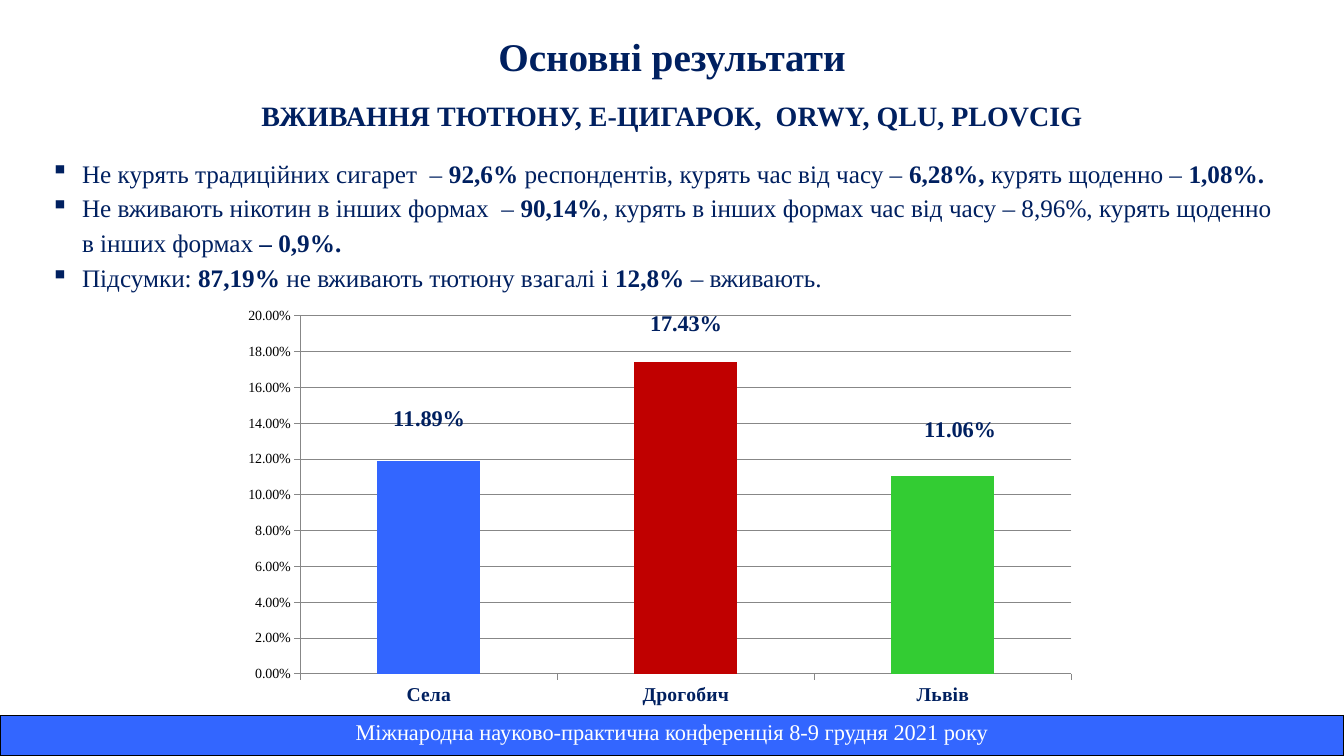
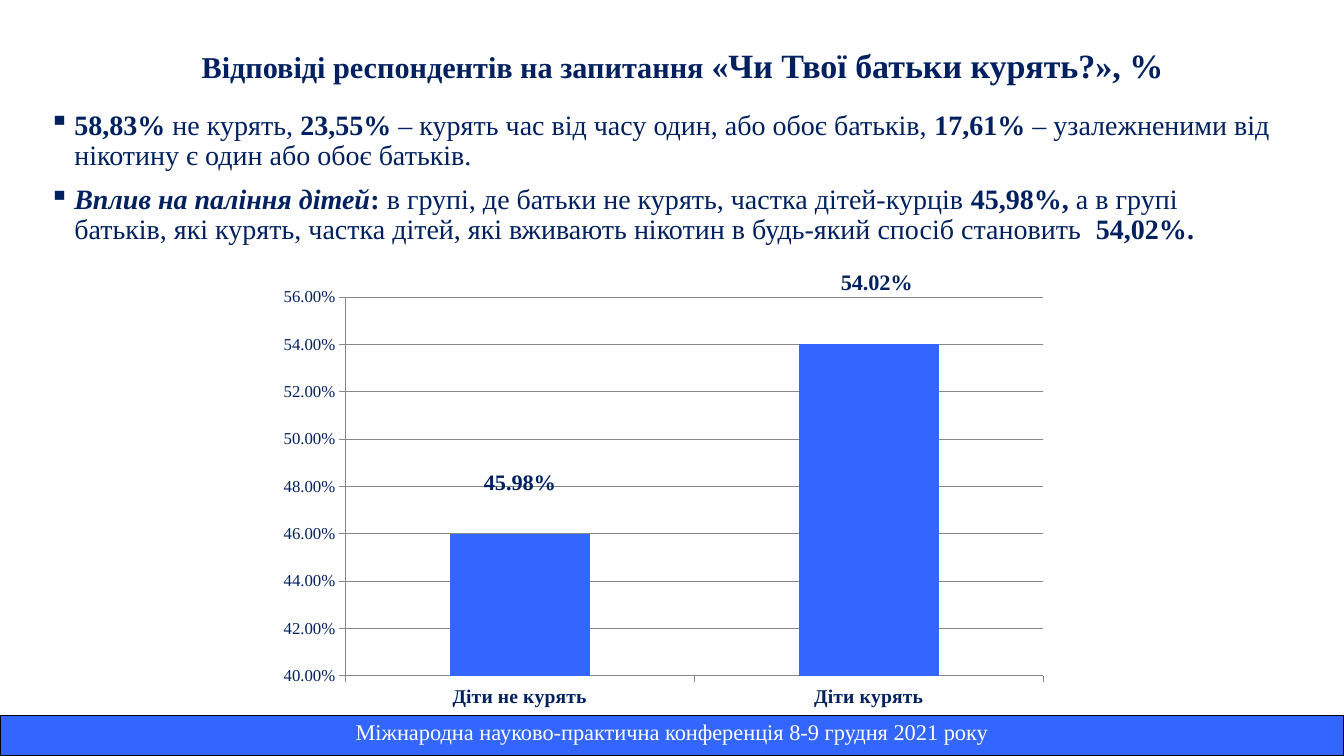
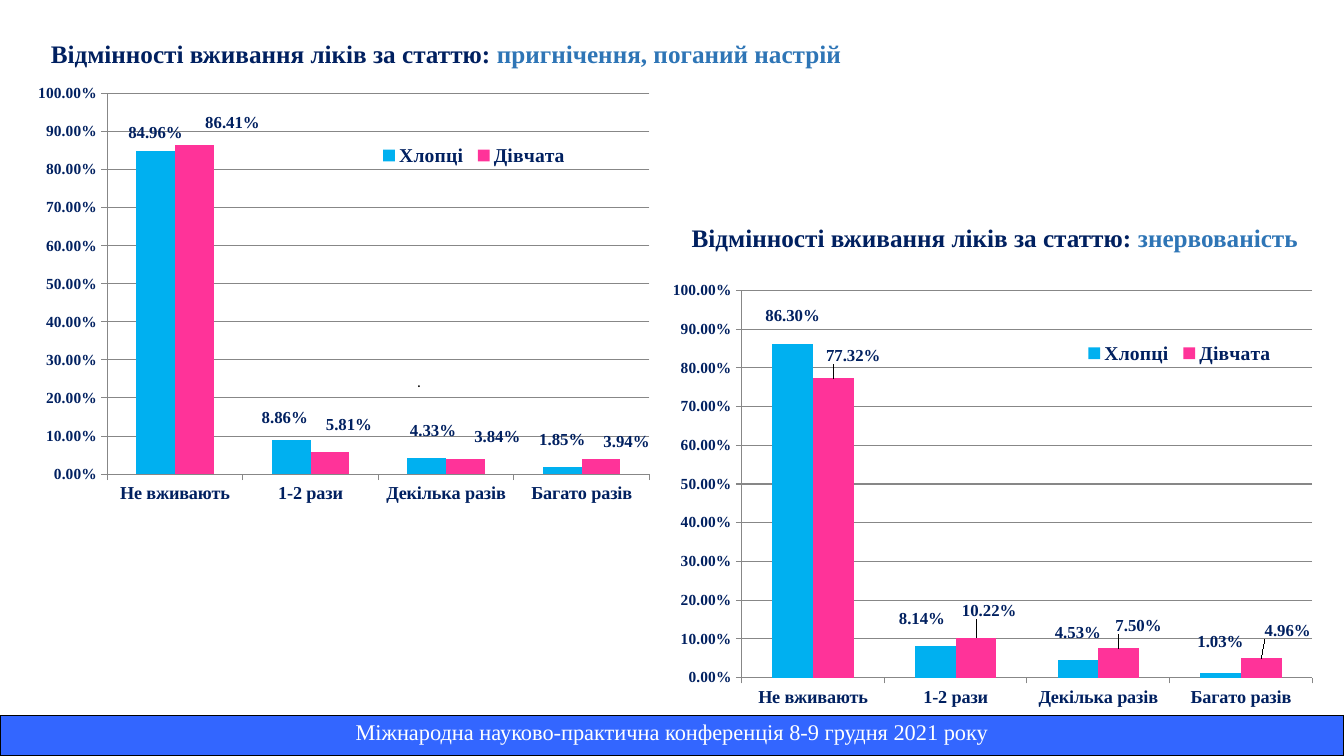
from dataclasses import dataclass
from typing import Any

from lxml import etree
from pptx import Presentation
from pptx import util as u
from pptx.chart import data as cd
from pptx.dml.color import RGBColor
from pptx.enum import chart as ce
from pptx.enum import text as te
from pptx.oxml import ns

Pt = u.Pt
FONT = "Times New Roman"
NAVY = RGBColor(0x00, 0x20, 0x60)
BLUE = RGBColor(0x33, 0x66, 0xFF)
RED = RGBColor(0xC0, 0x00, 0x00)
GREEN = RGBColor(0x33, 0xCC, 0x33)
SKY = RGBColor(0x00, 0xB0, 0xF0)
PINK = RGBColor(0xFF, 0x33, 0x99)
STEEL = RGBColor(0x2E, 0x75, 0xB6)
GRID = RGBColor(0x87, 0x87, 0x87)
BLACK = RGBColor(0, 0, 0)
WHITE = RGBColor(0xFF, 0xFF, 0xFF)
WIDTH, HEIGHT, FOOTER_H = 960, 540, 28.8
FOOTER = "Міжнародна науково-практична конференція 8-9 грудня 2021 року"


@dataclass
class Box:
    x: float
    y: float
    w: float
    h: float


@dataclass
class Run:
    text: str
    bold: bool = False
    italic: bool = False
    size: float | None = None
    color: RGBColor = NAVY
    font: str = FONT


@dataclass
class Para:
    runs: list[Run]
    size: float
    align: Any = te.PP_ALIGN.LEFT
    spacing: float = 1.0
    before: float = 0
    indent: float = 0


@dataclass
class Series:
    name: str
    values: list[float]
    colors: list[RGBColor]
    offsets: list[tuple[float, float]]
    leaders: bool = False


@dataclass
class Column:
    box: Box
    plot: Box
    cats: list[str]
    series: list[Series]
    low: float
    high: float
    step: float
    cat_size: float
    val_size: float
    label_size: float
    val_color: RGBColor = NAVY
    val_bold: bool = False
    legend: Box | None = None


def marked(line: str) -> list[Run]:
    return [Run(t, bold=i % 2 == 1) for i, t in enumerate(line.split("*")) if t]


def style(font: Any, size: float, color: RGBColor = NAVY, bold: bool = False, name: str = FONT) -> None:
    font.name, font.size, font.bold = name, Pt(size), bold
    font.color.rgb = color


def frame(box: Box) -> tuple[Any, ...]:
    return Pt(box.x), Pt(box.y), Pt(box.w), Pt(box.h)


def add_text(s: Any, box: Box, paras: list[Para], middle: bool = True) -> None:
    tf = s.shapes.add_textbox(*frame(box)).text_frame
    tf.word_wrap = True
    tf.vertical_anchor = te.MSO_ANCHOR.MIDDLE if middle else te.MSO_ANCHOR.TOP
    for i, para in enumerate(paras):
        p = tf.add_paragraph() if i else tf.paragraphs[0]
        p.alignment, p.line_spacing = para.align, para.spacing
        p.space_before = Pt(para.before)
        if para.indent:
            ppr = p._p.get_or_add_pPr()
            ppr.set("marL", str(Pt(para.indent)))
            ppr.set("indent", str(-Pt(para.indent)))
            etree.SubElement(ppr, ns.qn("a:buChar")).set("char", "▪")
        for run in para.runs:
            r = p.add_run()
            r.text = run.text
            style(r.font, run.size or para.size, run.color, run.bold, run.font)
            r.font.italic = run.italic


def add_title(s: Any, box: Box, runs: list[Run], size: float, align: Any = te.PP_ALIGN.CENTER) -> None:
    add_text(s, box, [Para(runs, size, align, 0.9)])


def add_footer(s: Any) -> None:
    box = Box(0, HEIGHT - FOOTER_H, WIDTH, FOOTER_H)
    table = s.shapes.add_table(1, 1, *frame(box)).table
    table.first_row = table.horz_banding = False
    cell = table.cell(0, 0)
    cell.text_frame.text = FOOTER
    p = cell.text_frame.paragraphs[0]
    p.alignment = te.PP_ALIGN.CENTER
    style(p.runs[0].font, 16, WHITE)
    tcpr = cell._tc.get_or_add_tcPr()
    for side in ("lnL", "lnR", "lnT", "lnB"):
        ln = etree.SubElement(tcpr, ns.qn(f"a:{side}"), w=str(Pt(1)))
        fill = etree.SubElement(ln, ns.qn("a:solidFill"))
        etree.SubElement(fill, ns.qn("a:srgbClr"), val=str(BLACK))
    cell.fill.solid()
    cell.fill.fore_color.rgb = BLUE


def set_layout(parent: Any, index: int, values: dict[str, Any]) -> None:
    for old in parent.findall(ns.qn("c:layout")):
        parent.remove(old)
    layout = etree.Element(ns.qn("c:layout"))
    manual = etree.SubElement(layout, ns.qn("c:manualLayout"))
    for tag, val in values.items():
        etree.SubElement(manual, ns.qn(f"c:{tag}")).set("val", str(val))
    parent.insert(index, layout)


def area(box: Box) -> dict[str, Any]:
    return {"xMode": "edge", "yMode": "edge", "x": box.x, "y": box.y, "w": box.w, "h": box.h}


def color_series(ser: Any, row: Series, label_size: float) -> None:
    ser.invert_if_negative = False
    ser.format.fill.solid()
    ser.format.fill.fore_color.rgb = row.colors[0]
    labels = ser.data_labels
    labels.show_value = True
    labels.number_format, labels.number_format_is_linked = "0.00%", False
    style(labels.font, label_size, bold=True)
    for i in range(len(row.offsets)):
        point = ser.points[i]
        if len(row.colors) > 1:
            point.format.fill.solid()
            point.format.fill.fore_color.rgb = row.colors[i]
        style(point.data_label.font, label_size, bold=True)
        point.data_label.position = ce.XL_LABEL_POSITION.OUTSIDE_END
    dlbls = ser._element.find(ns.qn("c:dLbls"))
    for dlbl, (x, y) in zip(dlbls.findall(ns.qn("c:dLbl")), row.offsets):
        set_layout(dlbl, 1, {"x": x, "y": y})
    for leader in dlbls.findall(ns.qn("c:showLeaderLines")):
        leader.set("val", str(int(row.leaders)))


def add_columns(s: Any, spec: Column) -> None:
    data = cd.CategoryChartData(number_format="0.00%")
    data.categories = spec.cats
    for row in spec.series:
        data.add_series(row.name, row.values)
    kind = ce.XL_CHART_TYPE.COLUMN_CLUSTERED
    chart = s.shapes.add_chart(kind, *frame(spec.box), data).chart
    style(chart.font, 10, BLACK)
    chart.has_title = False
    plot = chart.plots[0]
    plot.gap_width, plot.vary_by_categories = 150, False
    for ser, row in zip(plot.series, spec.series):
        color_series(ser, row, spec.label_size)
    cat, val = chart.category_axis, chart.value_axis
    for axis in (cat, val):
        axis.major_tick_mark = ce.XL_TICK_MARK.OUTSIDE
        axis.minor_tick_mark = ce.XL_TICK_MARK.NONE
        axis.format.line.color.rgb = GRID
    style(cat.tick_labels.font, spec.cat_size, bold=True)
    style(val.tick_labels.font, spec.val_size, spec.val_color, spec.val_bold)
    val.tick_labels.number_format = "0.00%"
    val.tick_labels.number_format_is_linked = False
    val.minimum_scale, val.maximum_scale, val.major_unit = spec.low, spec.high, spec.step
    val.has_major_gridlines = True
    val.major_gridlines.format.line.color.rgb = GRID
    set_layout(chart.element.xpath("c:chart/c:plotArea")[0], 0, {"layoutTarget": "inner", **area(spec.plot)})
    chart.has_legend = spec.legend is not None
    if spec.legend:
        chart.legend.position = ce.XL_LEGEND_POSITION.BOTTOM
        chart.legend.include_in_layout = False
        style(chart.legend.font, 14, bold=True)
        set_layout(chart.element.xpath("c:chart/c:legend")[0], 1, area(spec.legend))


def gender_columns(box: Box, plot: Box, legend: Box, boys: Series, girls: Series) -> Column:
    cats = ["Не вживають", "1-2 рази", "Декілька разів", "Багато разів"]
    return Column(box, plot, cats, [boys, girls], 0, 1, 0.1, 13, 11, 12, val_bold=True, legend=legend)


def results_slide(s: Any) -> None:
    add_text(s, Box(280, 18, 400, 44), [Para([Run("Основні результати", True)], 28, te.PP_ALIGN.CENTER)])
    add_title(s, Box(66, 54, 828, 59), [Run("ВЖИВАННЯ ТЮТЮНУ, Е-ЦИГАРОК,  ORWY, QLU, PLOVCIG", True)], 20)
    lines = [
        "Не курять традиційних сигарет  – *92,6% *респондентів, курять час від часу – *6,28%, *курять щоденно – *1,08%.*",
        "Не вживають нікотин в інших формах  – *90,14%*, курять в інших формах час від часу – 8,96%, "
        "курять щоденно в інших формах *– 0,9%.*",
        "Підсумки: *87,19%* не вживають тютюну взагалі і *12,8% *– вживають.",
    ]
    paras = [Para(marked(line), 18, spacing=1.15, indent=22.5) for line in lines]
    add_text(s, Box(29, 106, 891, 107), paras, middle=False)
    places = Series("Series 1", [0.1189, 0.1743, 0.1106], [BLUE, RED, GREEN], [(0, -0.06), (0, -0.05), (0.02, -0.07)])
    add_columns(s, Column(
        Box(165.6, 213.8, 612, 297.4), Box(0.08, 0.04, 0.9, 0.86), ["Села", "Дрогобич", "Львів"],
        [places], 0, 0.2, 0.02, 14, 10, 16, BLACK))


def parents_slide(s: Any) -> None:
    question = [
        Run("Відповіді респондентів на запитання ", True),
        Run("«Чи Твої батьки курять?», %", True, size=24.3),
    ]
    add_title(s, Box(73.5, 30, 828, 37), question, 21.6)
    shares = marked(
        "*58,83%* не курять, *23,55% *– курять час від часу один, або обоє батьків, "
        "*17,61% *– узалежненими від нікотину є один або обоє батьків.")
    influence = [Run("Вплив на паління дітей", True, True)] + marked(
        "*: *в групі, де батьки не курять, частка дітей-курців *45,98%, *а в групі батьків, які курять, "
        "частка дітей, які вживають нікотин в будь-який спосіб становить  *54,02%.*")
    paras = [Para(runs, 20, spacing=0.9, before=10, indent=18) for runs in (shares, influence)]
    add_text(s, Box(28, 75.6, 888.5, 110), paras, middle=False)
    children = Series("Series 1", [0.4598, 0.5402], [BLUE], [(0, -0.08), (0.01, -0.1)])
    add_columns(s, Column(
        Box(190, 193.7, 566.6, 317.5), Box(0.1, 0.05, 0.88, 0.86), ["Діти не курять", "Діти курять"],
        [children], 0.4, 0.56, 0.02, 14, 12, 16))


def gender_slide(s: Any) -> None:
    headings = [
        (Box(29.2, 26.6, 640, 26.6), "пригнічення, поганий настрій"),
        (Box(487, 158, 461, 26.6), "знервованість"),
    ]
    for box, mood in headings:
        runs = [Run("Відмінності вживання ліків за статтю: ", True), Run(mood, True, color=STEEL)]
        add_title(s, box, runs, 18, te.PP_ALIGN.LEFT)
    add_columns(s, gender_columns(
        Box(17.3, 53.3, 455.8, 339.8), Box(0.13, 0.04, 0.85, 0.8), Box(0.55, 0.14, 0.31, 0.06),
        Series("Хлопці", [0.8496, 0.0886, 0.0433, 0.0185], [SKY],
               [(0, -0.01), (-0.01, -0.02), (0.01, -0.03), (0, -0.03)]),
        Series("Дівчата", [0.8641, 0.0581, 0.0384, 0.0394], [PINK],
               [(0.06, -0.02), (0.03, -0.03), (0.05, -0.02), (0.04, -0.01)])))
    add_columns(s, gender_columns(
        Box(473, 193.7, 473.8, 345.6), Box(0.12, 0.04, 0.86, 0.8), Box(0.63, 0.14, 0.3, 0.06),
        Series("Хлопці", [0.863, 0.0814, 0.0453, 0.0103], [SKY],
               [(0, -0.03), (-0.02, -0.03), (0, -0.03), (0, -0.04)]),
        Series("Дівчата", [0.7732, 0.1022, 0.075, 0.0496], [PINK],
               [(0.03, -0.02), (0.02, -0.03), (0.03, -0.02), (0.04, -0.03)], leaders=True)))
    add_text(s, Box(290.9, 262, 17.3, 21), [Para([Run(".", color=BLACK, font="Calibri")], 11)])


def main() -> None:
    prs = Presentation()
    prs.slide_width, prs.slide_height = Pt(WIDTH), Pt(HEIGHT)
    for build in (results_slide, parents_slide, gender_slide):
        s = prs.slides.add_slide(prs.slide_layouts[6])
        build(s)
        add_footer(s)
    prs.save("out.pptx")


if __name__ == "__main__":
    main()
